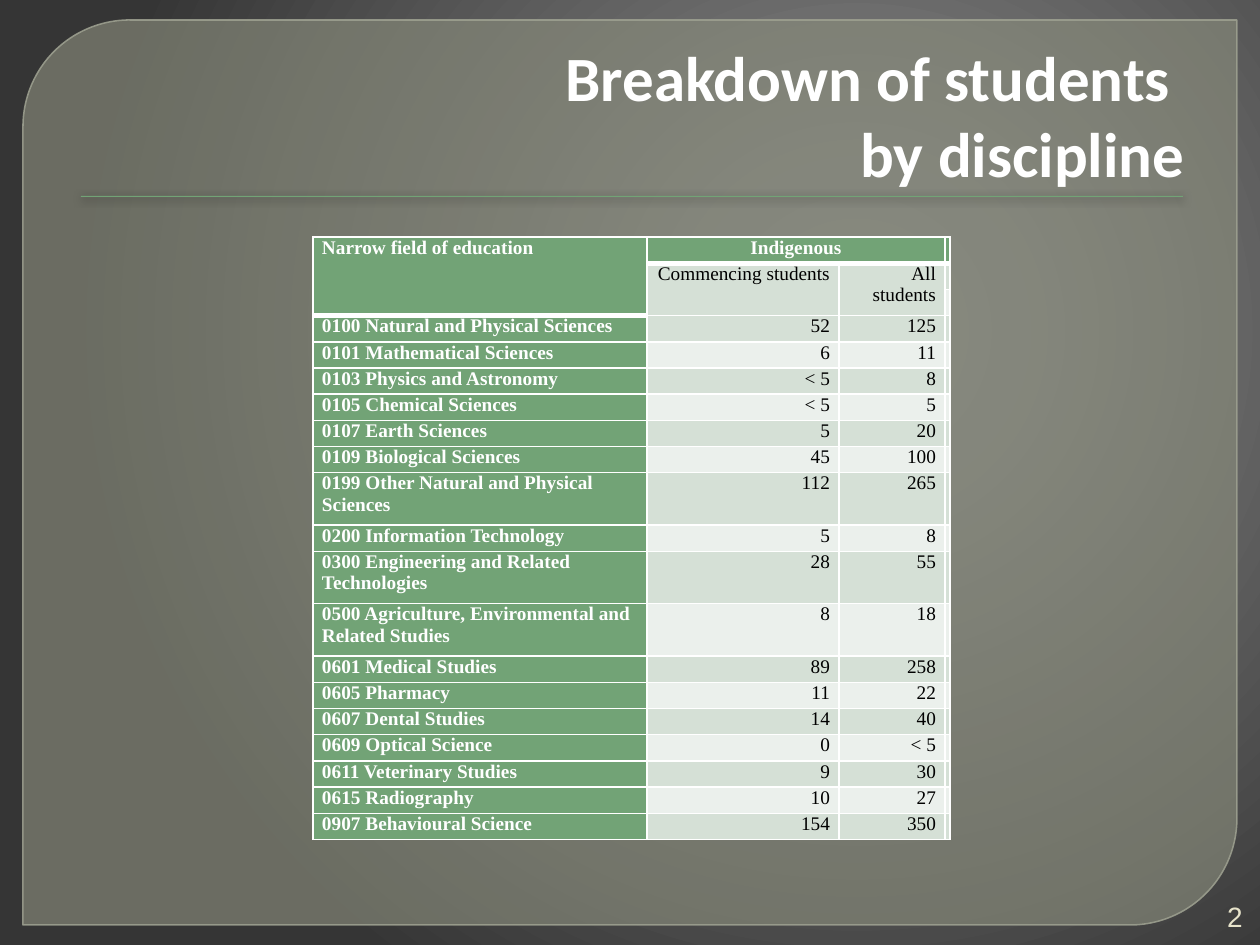
from lxml import etree
from pptx import Presentation
from pptx.dml.color import RGBColor
from pptx.enum.shapes import MSO_SHAPE
from pptx.enum.text import MSO_ANCHOR, PP_ALIGN
from pptx.oxml import parse_xml
from pptx.oxml.ns import nsdecls, qn
from pptx.util import Emu, Pt

PX = 914400 // 126
PANEL_SHAPE = MSO_SHAPE.ROUND_2_DIAG_RECTANGLE
RECTANGLE = MSO_SHAPE.RECTANGLE
LEFT, CENTER, RIGHT = PP_ALIGN.LEFT, PP_ALIGN.CENTER, PP_ALIGN.RIGHT
BOTTOM, MIDDLE = MSO_ANCHOR.BOTTOM, MSO_ANCHOR.MIDDLE

COLORS = {
    "white": "FFFFFF", "black": "000000", "green": "72A376",
    "band_dark": "D5E0D6", "band_light": "EBF0EC",
    "panel": "888B7B", "panel_line": "9DA090", "number": "E7E3CA",
}
BACKGROUND_STOPS = [(0, "8C8C8C"), (20, "7F7F7F"), (100, "353535")]

COLUMN_WIDTHS = [334, 192, 106, 4]
HEADER_ROWS = 3
FIELDS = [  # field of education, commencing students, all students, lines
    ("0100 Natural and Physical Sciences", "52", "125", 1),
    ("0101 Mathematical Sciences", "6", "11", 1),
    ("0103 Physics and Astronomy", "< 5", "8", 1),
    ("0105 Chemical Sciences", "< 5", "5", 1),
    ("0107 Earth Sciences", "5", "20", 1),
    ("0109 Biological Sciences", "45", "100", 1),
    ("0199 Other Natural and Physical Sciences", "112", "265", 2),
    ("0200 Information Technology", "5", "8", 1),
    ("0300 Engineering and Related Technologies", "28", "55", 2),
    ("0500 Agriculture, Environmental and Related Studies", "8", "18", 2),
    ("0601 Medical Studies", "89", "258", 1),
    ("0605 Pharmacy", "11", "22", 1),
    ("0607 Dental Studies", "14", "40", 1),
    ("0609 Optical Science", "0", "< 5", 1),
    ("0611 Veterinary Studies", "9", "30", 1),
    ("0615 Radiography", "10", "27", 1),
    ("0907 Behavioural Science", "154", "350", 1),
]


def px(value):
    return Emu(value * PX)


def rgb(name):
    return RGBColor.from_string(COLORS[name])


def set_alpha(color_format_parent, percent):
    color = color_format_parent.find(".//" + qn("a:srgbClr"))
    etree.SubElement(color, qn("a:alpha")).set("val", str(percent * 1000))


def format_paragraph(paragraph, font, size, color, bold, align):
    paragraph.alignment = align
    for run in paragraph.runs:
        run.font.name = font
        run.font.size = Pt(size)
        run.font.bold = bold
        run.font.color.rgb = rgb(color)


def add_text(slide, box, text, font, size, color, bold, anchor, bottom_inset):
    shape = slide.shapes.add_textbox(*map(px, box))
    frame = shape.text_frame
    frame.text = text
    frame.word_wrap = True
    frame.vertical_anchor = anchor
    frame.margin_top = frame.margin_bottom = px(bottom_inset)
    format_paragraph(frame.paragraphs[0], font, size, color, bold, RIGHT)


def paint_background(slide):
    slide.background.fill.gradient()
    gradient = slide.element.find(".//" + qn("a:gradFill"))
    stops = "".join(
        f'<a:gs pos="{position * 1000}"><a:srgbClr val="{color}"/></a:gs>'
        for position, color in BACKGROUND_STOPS)
    gradient.getparent().replace(gradient, parse_xml(
        f'<a:gradFill {nsdecls("a")} rotWithShape="1"><a:gsLst>{stops}</a:gsLst>'
        '<a:path path="circle"><a:fillToRect l="68000" t="35000" r="32000" '
        'b="65000"/></a:path></a:gradFill>'))


def add_panel(slide, box):
    panel = slide.shapes.add_shape(PANEL_SHAPE, *map(px, box))
    panel.shadow.inherit = False
    panel.adjustments[0] = 0.118
    panel.adjustments[1] = 0
    panel.fill.solid()
    panel.fill.fore_color.rgb = rgb("panel")
    panel.line.color.rgb = rgb("panel_line")
    panel.line.width = Pt(0.87)
    properties = panel.element.spPr
    set_alpha(properties.find(qn("a:solidFill")).getparent(), 65)
    set_alpha(properties.find(qn("a:ln")), 88)


def add_header(slide, box):
    left, top, width, height = box
    # Rule with a soft shadow
    rule = slide.shapes.add_shape(
        RECTANGLE, px(left + 18), px(top + height + 3), px(width - 32), px(1))
    rule.shadow.inherit = False
    rule.fill.solid()
    rule.fill.fore_color.rgb = rgb("green")
    rule.line.fill.background()
    rule.element.spPr.find(qn("a:effectLst")).append(parse_xml(
        f'<a:outerShdw {nsdecls("a")} blurRad="63500" dist="12700" '
        f'dir="5400000" rotWithShape="0"><a:srgbClr val="{COLORS["black"]}">'
        '<a:alpha val="75000"/></a:srgbClr></a:outerShdw>'))
    # Title
    add_text(slide, box, "Breakdown of students \vby discipline",
             "Calibri", 36, "white", True, BOTTOM, 3)


def set_borders(cell, widths):
    properties = cell._tc.get_or_add_tcPr()
    for index, (side, width) in enumerate(widths.items()):
        properties.insert(index, parse_xml(
            f'<a:ln{side} {nsdecls("a")} w="{Pt(width)}"><a:solidFill>'
            f'<a:srgbClr val="{COLORS["white"]}"/></a:solidFill></a:ln{side}>'))


def style_cell(cell, text, fill, color, bold, align, top_line, bottom_line):
    cell.text = text
    cell.margin_left = cell.margin_right = px(9 if text else 0)
    cell.margin_top = cell.margin_bottom = 0
    cell.fill.solid()
    cell.fill.fore_color.rgb = rgb(fill)
    paragraph = cell.text_frame.paragraphs[0]
    format_paragraph(paragraph, "Times New Roman", 11, color, bold, align)
    if not text:  # keeps empty cells from stretching their row
        etree.SubElement(paragraph._p, qn("a:endParaRPr")).set("sz", "1100")
    set_borders(cell, {"L": 1, "R": 1, "T": top_line, "B": bottom_line})


def add_student_table(slide, box):
    left, top, width, height = box
    rows = [
        ("Narrow field of education", "Indigenous", "", ""),
        ("", "Commencing students", "All students", ""),
        ("", "", "", ""),
    ] + [(*field[:3], "") for field in FIELDS]
    lines = [1] * HEADER_ROWS + [field[3] for field in FIELDS]
    table = slide.shapes.add_table(
        len(rows), len(COLUMN_WIDTHS), *map(px, box)).table
    table.first_row = table.horz_banding = False
    for column, column_width in zip(table.columns, COLUMN_WIDTHS):
        column.width = px(column_width)
    for row, line_count in zip(table.rows, lines):
        row.height = Emu(px(height) * line_count // sum(lines))

    for row_index, values in enumerate(rows):
        band = "band_dark" if row_index % 2 else "band_light"
        for column_index, text in enumerate(values):
            header_depth = 1 if column_index else HEADER_ROWS
            green = column_index == 0 or row_index == 0
            if row_index == 0 and column_index == 1:
                align = CENTER
            else:
                align = RIGHT if column_index else LEFT
            style_cell(
                table.cell(row_index, column_index), text,
                "green" if green else band, "white" if green else "black",
                green, align,
                top_line=3 if row_index == header_depth else 1,
                bottom_line=3 if row_index in (0, header_depth - 1) else 1)

    # Merged header cells
    for first, last in [((0, 0), (2, 0)), ((0, 1), (0, 2)),
                        ((1, 1), (2, 1)), ((1, 2), (2, 2))]:
        table.cell(*first).merge(table.cell(*last))


def main():
    presentation = Presentation()
    presentation.slide_width, presentation.slide_height = px(1260), px(945)
    slide = presentation.slides.add_slide(presentation.slide_layouts[6])
    paint_background(slide)
    add_panel(slide, (23, 20, 1214, 905))
    add_header(slide, (63, 35, 1134, 158))
    add_student_table(slide, (313, 237, sum(COLUMN_WIDTHS), 603))
    # Slide number
    add_text(slide, (1191, 897, 64, 38), "2", "Arial", 16, "number",
             False, MIDDLE, 0)
    presentation.save("out.pptx")


if __name__ == "__main__":
    main()
